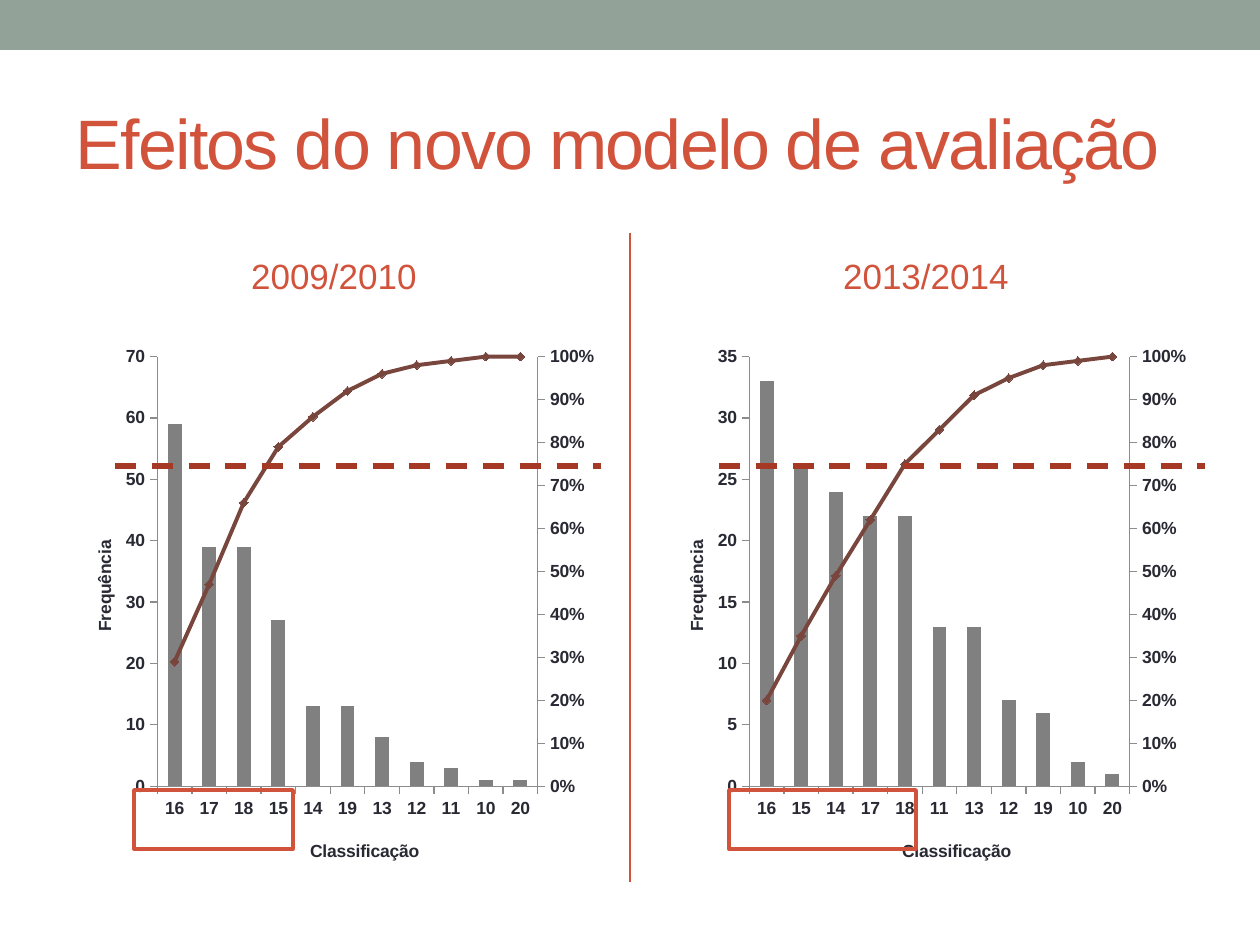
from itertools import accumulate

from pptx import Presentation
from pptx import util as u
from pptx.chart.data import CategoryChartData
from pptx.dml.color import RGBColor
from pptx.enum import chart as ce, dml, shapes, text
from pptx.oxml import parse_xml
from pptx.oxml.ns import nsdecls, qn
from pptx.oxml.xmlchemy import OxmlElement

PX = 914400 / 126
SAGE = RGBColor(0x93, 0xA2, 0x99)
RED = RGBColor(0xD2, 0x53, 0x3C)
DARK_RED = RGBColor(0xA5, 0x39, 0x26)
BROWN = RGBColor(0x79, 0x46, 0x3D)
GRAY = RGBColor(0x80, 0x80, 0x80)
AXIS_GRAY = RGBColor(0x8C, 0x8C, 0x8C)
INK = RGBColor(0x29, 0x29, 0x34)

SECONDARY = f"""<c:plotArea {nsdecls("c")}>
<c:lineChart><c:grouping val="standard"/><c:varyColors val="0"/>
<c:marker val="1"/><c:axId val="501"/><c:axId val="502"/></c:lineChart>
<c:catAx><c:axId val="501"/><c:scaling><c:orientation val="minMax"/></c:scaling>
<c:delete val="1"/><c:axPos val="b"/><c:majorTickMark val="none"/><c:minorTickMark val="none"/>
<c:tickLblPos val="nextTo"/><c:crossAx val="502"/><c:crosses val="autoZero"/></c:catAx>
<c:valAx><c:axId val="502"/><c:scaling><c:orientation val="minMax"/><c:max val="1"/><c:min val="0"/></c:scaling>
<c:delete val="0"/><c:axPos val="r"/><c:numFmt formatCode="0%" sourceLinked="0"/>
<c:majorTickMark val="out"/><c:minorTickMark val="none"/><c:tickLblPos val="nextTo"/>
<c:spPr><a:ln {nsdecls("a")} w="9525"><a:solidFill><a:srgbClr val="{AXIS_GRAY}"/></a:solidFill></a:ln></c:spPr>
<c:crossAx val="501"/><c:crosses val="max"/><c:crossBetween val="between"/>
<c:majorUnit val="0.1"/></c:valAx></c:plotArea>"""


def set_layout(parent, **values):
    """Place a plot area or a chart title by fractions of the chart."""
    for old in parent.findall(qn("c:layout")):
        parent.remove(old)
    layout, manual = OxmlElement("c:layout"), OxmlElement("c:manualLayout")
    layout.append(manual)
    for name, value in values.items():
        item = OxmlElement(f"c:{name}")
        item.set("val", str(value))
        manual.append(item)
    title_text = parent.find(qn("c:tx"))
    if title_text is None:
        parent.insert(0, layout)
    else:
        title_text.addnext(layout)


def add_line(x1, y1, x2, y2, color, width):
    line = slide.shapes.add_connector(
        shapes.MSO_CONNECTOR.STRAIGHT, *(u.Emu(round(n * PX)) for n in (x1, y1, x2, y2)))
    line.line.color.rgb = color
    line.line.width = u.Pt(width)
    line._element.spPr.append(OxmlElement("a:effectLst"))
    return line


presentation = Presentation()
presentation.slide_width = u.Inches(10)
presentation.slide_height = u.Inches(7.5)
slide = presentation.slides.add_slide(presentation.slide_layouts[5])

band = slide.shapes.add_shape(
    shapes.MSO_SHAPE.RECTANGLE, 0, 0, presentation.slide_width, round(50 * PX))
band.fill.solid()
band.fill.fore_color.rgb = SAGE
band.line.fill.background()
band.shadow.inherit = False

add_line(630, 233, 630, 882, RED, 1.5)

title = slide.shapes.title
title.left, title.top, title.width, title.height = (round(n * PX) for n in (63, 73, 1134, 136))
title.text_frame.vertical_anchor = text.MSO_ANCHOR.MIDDLE
paragraph = title.text_frame.paragraphs[0]
paragraph.alignment = text.PP_ALIGN.LEFT
run = paragraph.add_run()
run.text = "Efeitos do novo modelo de avaliação"
run.font.size = u.Pt(40)
run.font.name = "Arial"
run.font.color.rgb = RED
run._r.get_or_add_rPr().set("spc", "-100")

# heading, left, axis step, grades, frequencies, dashed line left, box left, box width
years = [
    ("2009/2010", 63, 10, [16, 17, 18, 15, 14, 19, 13, 12, 11, 10, 20],
     [59, 39, 39, 27, 13, 13, 8, 4, 3, 1, 1], 115, 134, 159),
    ("2013/2014", 655, 5, [16, 15, 14, 17, 18, 11, 13, 12, 19, 10, 20],
     [33, 26, 24, 22, 22, 13, 13, 7, 6, 2, 1], 719, 729, 187),
]

for heading, left, step, grades, counts, dash_left, box_left, box_width in years:
    label = slide.shapes.add_textbox(*(round(n * PX) for n in (left, 231, 542, 88)))
    label.text_frame.word_wrap = True
    label.text_frame.vertical_anchor = text.MSO_ANCHOR.MIDDLE
    paragraph = label.text_frame.paragraphs[0]
    paragraph.alignment = text.PP_ALIGN.CENTER
    paragraph.space_before = u.Pt(4)
    run = paragraph.add_run()
    run.text = heading
    run.font.size = u.Pt(20)
    run.font.name = "Arial"
    run.font.color.rgb = RED

    data = CategoryChartData()
    data.categories = [str(grade) for grade in grades]
    data.add_series("Series 1", counts)
    data.add_series("Series 2", [round(n / sum(counts), 2) for n in accumulate(counts)])
    chart = slide.shapes.add_chart(
        ce.XL_CHART_TYPE.COLUMN_CLUSTERED,
        *(round(n * PX) for n in (left, 336, 542, 544)), data).chart
    chart.has_legend = False
    chart.has_title = False
    chart.font.size = u.Pt(10)
    chart.font.bold = True
    chart.font.name = "Arial"
    chart.font.color.rgb = INK

    chart.value_axis.minimum_scale = 0
    chart.value_axis.maximum_scale = 7 * step
    chart.value_axis.major_unit = step
    chart.value_axis.has_major_gridlines = False
    for axis, name, x, y in ((chart.category_axis, "Classificação", 0.45, 0.92),
                             (chart.value_axis, "Frequência", 0.05, 0.37)):
        axis.major_tick_mark = ce.XL_TICK_MARK.OUTSIDE
        axis.format.line.color.rgb = AXIS_GRAY
        axis.format.line.width = u.Pt(0.75)
        run = axis.axis_title.text_frame.paragraphs[0].add_run()
        run.text = name
        run.font.size = u.Pt(10)
        run.font.bold = True
        run.font.name = "Arial"
        run.font.color.rgb = INK
        set_layout(axis._element.find(qn("c:title")), xMode="edge", yMode="edge", x=x, y=y)

    # The cumulative share becomes a line on a second axis
    plot_area = chart._chartSpace.chart.plotArea
    columns = plot_area.find(qn("c:barChart"))
    secondary = parse_xml(SECONDARY)
    line_chart = secondary.find(qn("c:lineChart"))
    hidden_axis = secondary.find(qn("c:catAx"))
    share_axis = secondary.find(qn("c:valAx"))
    share = columns.findall(qn("c:ser"))[1]
    for bar_setting in share.findall(qn("c:invertIfNegative")):
        share.remove(bar_setting)
    line_chart.insert(2, share)
    columns.addnext(line_chart)
    plot_area.find(qn("c:valAx")).addnext(share_axis)
    share_axis.addnext(hidden_axis)
    set_layout(plot_area, layoutTarget="inner", xMode="edge", yMode="edge",
               x=0.174, y=0.038, w=0.702, h=0.79)

    column_plot, line_plot = chart.plots
    column_plot.gap_width = 150
    column_plot.vary_by_categories = False
    frequency = column_plot.series[0]
    frequency.format.fill.solid()
    frequency.format.fill.fore_color.rgb = GRAY
    cumulative = line_plot.series[0]
    cumulative.smooth = False
    cumulative.format.line.color.rgb = BROWN
    cumulative.format.line.width = u.Pt(2.25)
    cumulative.marker.style = ce.XL_MARKER_STYLE.DIAMOND
    cumulative.marker.size = 5
    cumulative.marker.format.fill.solid()
    cumulative.marker.format.fill.fore_color.rgb = BROWN
    cumulative.marker.format.line.color.rgb = BROWN

    threshold = add_line(dash_left, 466, dash_left + 486, 466, DARK_RED, 3)
    threshold.line.dash_style = dml.MSO_LINE.DASH

    box = slide.shapes.add_shape(
        shapes.MSO_SHAPE.RECTANGLE, *(round(n * PX) for n in (box_left, 790, box_width, 59)))
    box.fill.background()
    box.line.color.rgb = RED
    box.line.width = u.Pt(2.08)
    box.shadow.inherit = False

presentation.save("out.pptx")
